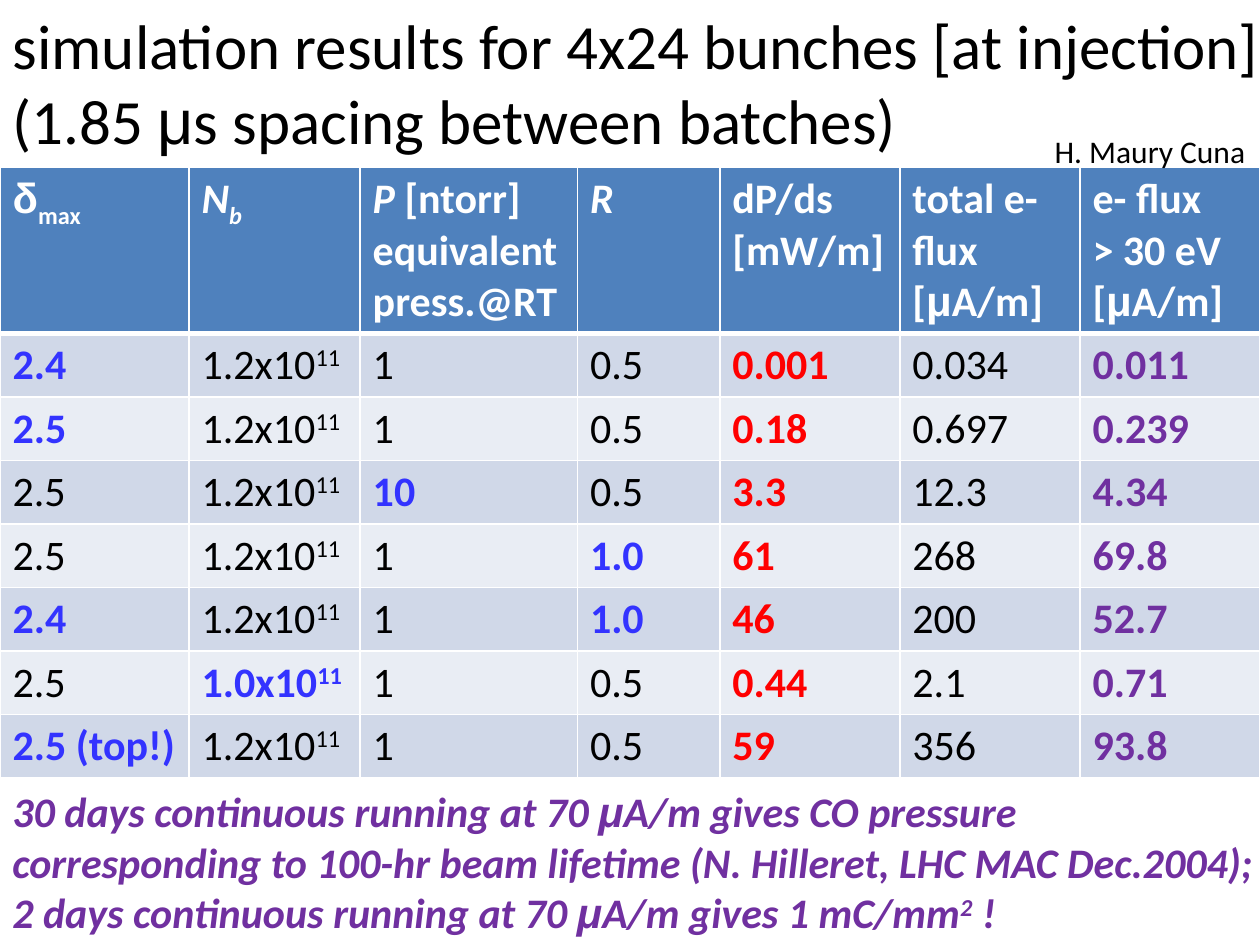
from itertools import groupby

from lxml.etree import SubElement
from pptx import Presentation
from pptx.dml.color import RGBColor
from pptx.enum.text import MSO_ANCHOR, MSO_AUTO_SIZE as AutoSize, PP_ALIGN
from pptx.oxml.ns import qn
from pptx.util import Cm, Pt

COLORS = {
    "black": "000000", "white": "FFFFFF", "header": "4F81BD",
    "band_dark": "D0D8E8", "band_light": "E9EDF4",
    "changed": "3333FF", "heat": "FF0000", "flux": "7030A0",
}
BASELINES = {"^": "30000", "_": "-25000"}


def write_text(frame, text, size, color, bold=False, italic=False):
    """Fill a frame; "|" separates runs, which may start with ~ (italic), ^ or _."""
    frame.text = ""
    for index, line in enumerate(text.split("\n")):
        paragraph = frame.add_paragraph() if index else frame.paragraphs[0]
        paragraph.alignment = PP_ALIGN.LEFT
        for piece in line.split("|"):
            slanted = italic or piece.startswith("~")
            piece = piece.removeprefix("~")
            baseline = BASELINES.get(piece[:1])
            if baseline:
                piece = piece[1:]
            for is_greek, letters in groupby(piece, lambda letter: letter in "δμ"):
                run = paragraph.add_run()
                run.text = "".join(letters)
                run.font.name = "Arial" if is_greek else "Calibri"
                run.font.size = Pt(size)
                run.font.bold = bold
                run.font.italic = slanted
                run.font.color.rgb = RGBColor.from_string(COLORS[color])
                if baseline:
                    run.font._element.set("baseline", baseline)


def add_borders(cell, widths):
    """Draw white borders, with widths in points for left, right, top and bottom."""
    properties = cell._tc.get_or_add_tcPr()
    for index, (side, width) in enumerate(zip("LRTB", widths)):
        line = SubElement(properties, qn(f"a:ln{side}"), w=str(Pt(width)))
        fill = SubElement(line, qn("a:solidFill"))
        SubElement(fill, qn("a:srgbClr"), val=COLORS["white"])
        properties.insert(index, line)


prs = Presentation()
prs.slide_width, prs.slide_height = Cm(25.4), Cm(19.05)
slide = prs.slides.add_slide(prs.slide_layouts[5])

# Results table; * marks the parameter changed in a run
header = [
    "δ|_max", "~N|~_b", "~P |[ntorr]\nequivalent\npress.@RT", "~R",
    "dP/ds [mW/m]", "total e- flux\n[μA/m]", "e- flux\n> 30 eV\n[μA/m]",
]
results = [
    ["*2.4", "1.2x10|^11", "1", "0.5", "0.001", "0.034", "0.011"],
    ["*2.5", "1.2x10|^11", "1", "0.5", "0.18", "0.697", "0.239"],
    ["2.5", "1.2x10|^11", "*10", "0.5", "3.3", "12.3", "4.34"],
    ["2.5", "1.2x10|^11", "1", "*1.0", "61", "268", "69.8"],
    ["*2.4", "1.2x10|^11", "1", "*1.0", "46", "200", "52.7"],
    ["2.5", "*1.0x10|^11", "1", "0.5", "0.44", "2.1", "0.71"],
    ["*2.5 (top!)", "1.2x10|^11", "1", "0.5", "59", "356", "93.8"],
]
column_widths = [3.81, 3.45, 4.38, 2.87, 3.63, 3.63, 3.63]
column_colors = {4: "heat", 6: "flux"}

table = slide.shapes.add_table(
    len(results) + 1, len(header), Cm(0), Cm(3.38), Cm(25.4), Cm(12.3)
).table
for column, width in zip(table.columns, column_widths):
    column.width = Cm(width)

for row_index, values in enumerate([header] + results):
    is_header = row_index == 0
    table.rows[row_index].height = Cm(3.34 if is_header else 1.28)
    if is_header:
        band = "header"
    else:
        band = "band_dark" if row_index % 2 else "band_light"
    for column_index, value in enumerate(values):
        cell = table.cell(row_index, column_index)
        cell.fill.solid()
        cell.fill.fore_color.rgb = RGBColor.from_string(COLORS[band])
        add_borders(cell, (1, 1, 3 if row_index == 1 else 1, 3 if is_header else 1))
        if is_header:
            color = "white"
        elif value.startswith("*"):
            color = "changed"
        else:
            color = column_colors.get(column_index, "black")
        write_text(cell.text_frame, value.removeprefix("*"), 24, color,
                   bold=color != "black")

# Title, conclusion and author
title = slide.shapes.title
conclusion = slide.shapes.add_textbox(0, 0, 0, 0)
author = slide.shapes.add_textbox(0, 0, 0, 0)
placements = [
    (title, 0, 0, 25.88, 3.33),
    (conclusion, 0, 15.72, 25.73, 3.33),
    (author, 21.01, 2.54, 4.39, 1.02),
]
for shape, left, top, width, height in placements:
    shape.left, shape.top = Cm(left), Cm(top)
    shape.width, shape.height = Cm(width), Cm(height)
    shape.text_frame.word_wrap = False
    shape.text_frame.auto_size = AutoSize.SHAPE_TO_FIT_TEXT
    shape.text_frame.vertical_anchor = MSO_ANCHOR.TOP

write_text(
    title.text_frame,
    "simulation results for 4x24 bunches [at injection]\n"
    "(1.85 μs spacing between batches)",
    36, "black",
)
write_text(
    conclusion.text_frame,
    "30 days continuous running at 70 μA/m gives CO pressure\n"
    "corresponding to 100-hr beam lifetime (N. Hilleret, LHC MAC Dec.2004);\n"
    "2 days continuous running at 70 μA/m gives 1 mC/mm|^2| !",
    24, "flux", bold=True, italic=True,
)
write_text(author.text_frame, "H. Maury Cuna", 18, "black")

prs.save("out.pptx")
